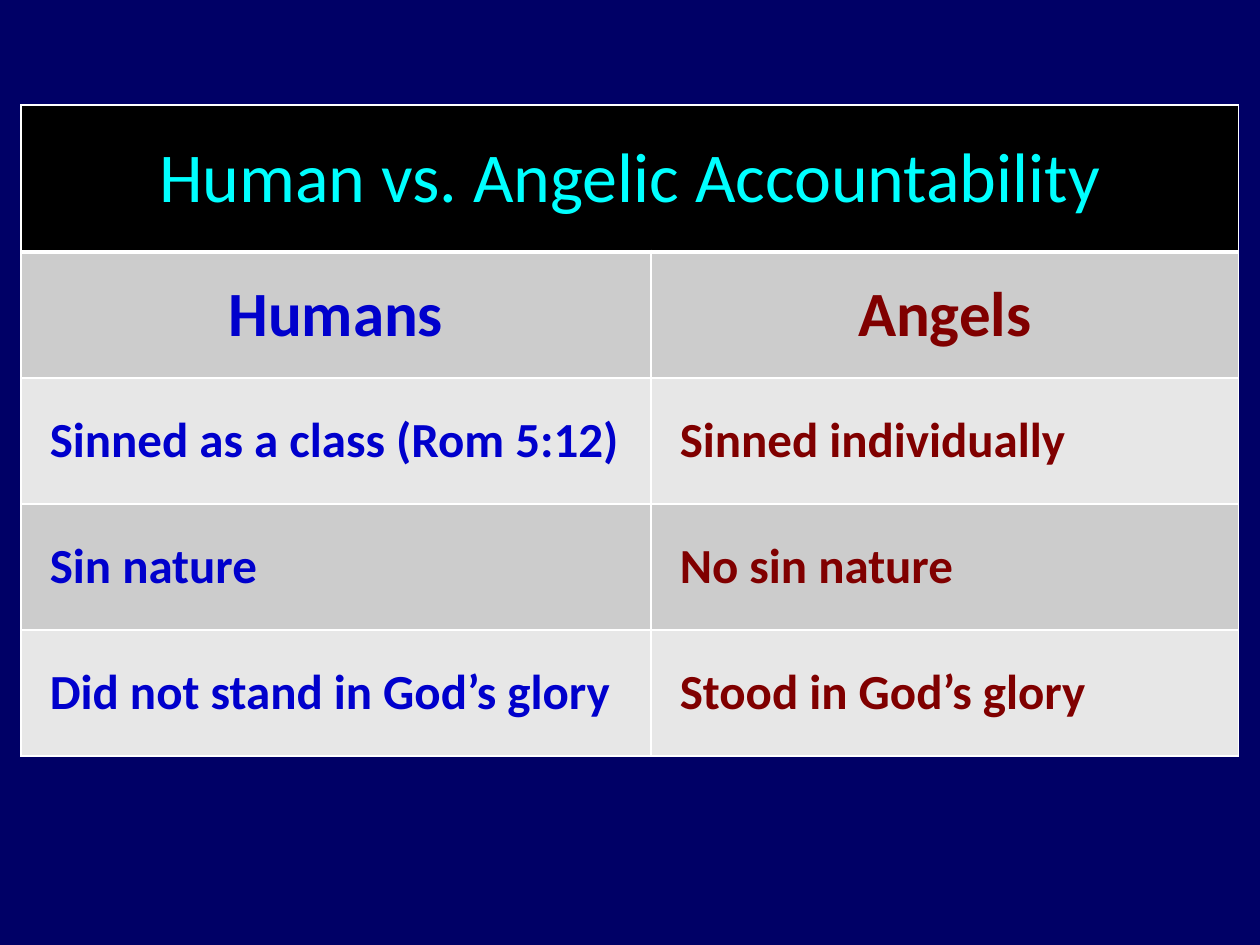
from lxml import etree
from pptx import Presentation
from pptx.dml.color import RGBColor
from pptx.enum.text import MSO_ANCHOR, PP_ALIGN
from pptx.oxml.ns import qn
from pptx.util import Cm, Pt

CENTER, JUSTIFY = PP_ALIGN.CENTER, PP_ALIGN.JUSTIFY
MIDDLE = MSO_ANCHOR.MIDDLE

NAVY = RGBColor(0x00, 0x00, 0x66)
BLACK = RGBColor(0x00, 0x00, 0x00)
WHITE = RGBColor(0xFF, 0xFF, 0xFF)
CYAN = RGBColor(0x00, 0xFF, 0xFF)
BLUE = RGBColor(0x00, 0x00, 0xCC)
MAROON = RGBColor(0x80, 0x00, 0x00)
BANDS = (RGBColor(0xCC, 0xCC, 0xCC), RGBColor(0xE7, 0xE7, 0xE7))

TITLE = "Human vs. Angelic Accountability"
HEADINGS = ("Humans", "Angels")
COMPARISONS = [
    ("Sinned as a class (Rom 5:12)", "Sinned individually"),
    ("Sin nature", "No sin nature"),
    ("Did not stand in God’s glory", "Stood in God’s glory"),
]
COLUMN_COLORS = (BLUE, MAROON)
COLUMN_WIDTHS = (Cm(12.7), Cm(11.85))
TITLE_HEIGHT, ROW_HEIGHT = Cm(2.96), Cm(2.54)
TABLE_LEFT, TABLE_TOP = Cm(0.42), Cm(2.12)
INDENT = Cm(0.33)


def write_cell(cell, text, *, size, color, bold=True, align=JUSTIFY, indent=0):
    cell.vertical_anchor = MIDDLE
    paragraph = cell.text_frame.paragraphs[0]
    paragraph.text = text
    paragraph.alignment = align
    properties = paragraph._p.get_or_add_pPr()
    properties.set("marL", str(indent))
    properties.set("indent", "0")
    font = paragraph.runs[0].font
    font.name = "Calibri"
    font.size = Pt(size)
    font.bold = bold
    font.color.rgb = color


def style_cell(cell, fill, top=1, bottom=1):
    properties = cell._tc.get_or_add_tcPr()
    for side, width in (("L", 1), ("R", 1), ("T", top), ("B", bottom)):
        line = etree.SubElement(properties, qn(f"a:ln{side}"), w=str(Pt(width)))
        solid = etree.SubElement(line, qn("a:solidFill"))
        etree.SubElement(solid, qn("a:srgbClr"), val=str(WHITE))
    cell.fill.solid()
    cell.fill.fore_color.rgb = fill


def add_comparison_table(slide):
    rows = [HEADINGS] + COMPARISONS
    table = slide.shapes.add_table(
        len(rows) + 1, len(HEADINGS), TABLE_LEFT, TABLE_TOP,
        sum(COLUMN_WIDTHS), TITLE_HEIGHT + len(rows) * ROW_HEIGHT,
    ).table
    for column, width in zip(table.columns, COLUMN_WIDTHS):
        column.width = width
    for row in table.rows:
        row.height = ROW_HEIGHT
    table.rows[0].height = TITLE_HEIGHT

    table.cell(0, 0).merge(table.cell(0, 1))
    for cell in table.rows[0].cells:
        style_cell(cell, BLACK, bottom=3)
    write_cell(table.cell(0, 0), TITLE, size=40, color=CYAN, bold=False, align=CENTER)

    for row_index, texts in enumerate(rows):
        is_heading = row_index == 0
        layout = (
            {"size": 36, "align": CENTER} if is_heading
            else {"size": 28, "indent": INDENT}
        )
        for column_index, text in enumerate(texts):
            cell = table.cell(row_index + 1, column_index)
            style_cell(cell, BANDS[row_index % 2], top=3 if is_heading else 1)
            write_cell(cell, text, color=COLUMN_COLORS[column_index], **layout)


def main():
    presentation = Presentation()
    presentation.slide_width, presentation.slide_height = Cm(25.4), Cm(19.05)
    slide = presentation.slides.add_slide(presentation.slide_layouts[6])
    slide.background.fill.solid()
    slide.background.fill.fore_color.rgb = NAVY
    add_comparison_table(slide)
    presentation.save("out.pptx")


if __name__ == "__main__":
    main()
